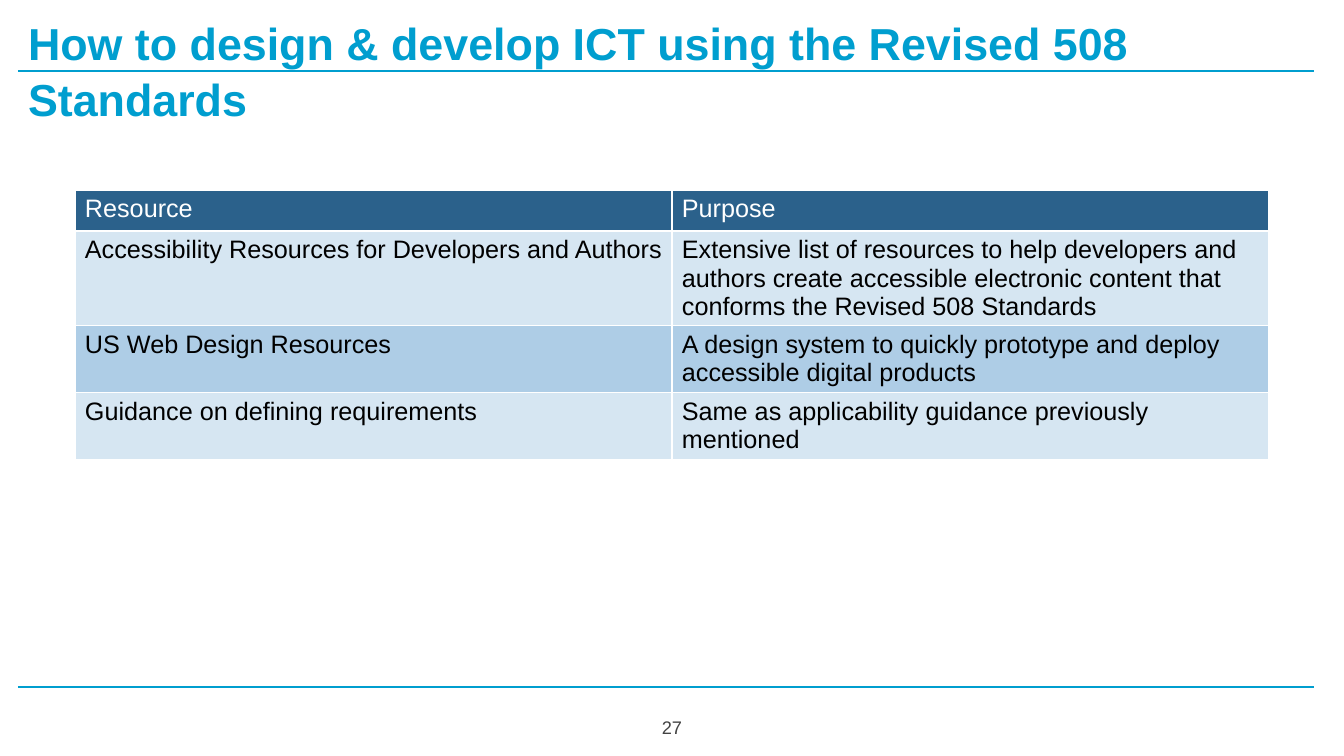
from lxml.etree import SubElement
from pptx import Presentation
from pptx.dml.color import RGBColor
from pptx.enum.shapes import MSO_CONNECTOR
from pptx.enum.text import MSO_ANCHOR, MSO_AUTO_SIZE, PP_ALIGN
from pptx.oxml.ns import qn
from pptx.util import Pt

COLORS = {
    "accent": "009ECF",
    "header": "2B618B",
    "light_band": "D6E6F2",
    "dark_band": "AECDE6",
    "white": "FFFFFF",
    "black": "000000",
    "page_number": "434343",
}
RESOURCES = [
    ("Resource", "Purpose"),
    (
        "Accessibility Resources for Developers and Authors",
        "Extensive list of resources to help developers and authors create "
        "accessible electronic content that conforms the Revised 508 Standards",
    ),
    (
        "US Web Design Resources",
        "A design system to quickly prototype and deploy accessible digital products",
    ),
    (
        "Guidance on defining requirements",
        "Same as applicability guidance previously mentioned",
    ),
]
ROW_HEIGHTS = (41, 94, 67, 67)
BORDER_SIDES = ("a:lnL", "a:lnR", "a:lnT", "a:lnB")


def px(length):
    return round(length * 914400 / 100.8)


def rgb(name):
    return RGBColor.from_string(COLORS[name])


def apply(target, values):
    for key, value in values.items():
        setattr(target, key, value)


def write(frame, text, size, color, bold=False, inset=10, **paragraph_format):
    margins = ("margin_left", "margin_right", "margin_top", "margin_bottom")
    apply(frame, {"word_wrap": True, **dict.fromkeys(margins, px(inset))})
    frame.text = text
    paragraph = frame.paragraphs[0]
    apply(paragraph, paragraph_format)
    apply(paragraph.font, {"name": "Arial", "size": Pt(size), "bold": bold})
    paragraph.font.color.rgb = rgb(color)


def add_rule(slide, left, top, width):
    rule = slide.shapes.add_connector(
        MSO_CONNECTOR.STRAIGHT, px(left), px(top), px(left + width), px(top)
    )
    rule.line.color.rgb = rgb("accent")
    rule.line.width = Pt(1.5)
    SubElement(rule._element.spPr, qn("a:effectLst"))


def add_title(slide, left, top, width, height):
    title = slide.shapes.title
    apply(title, {"left": px(left), "top": px(top), "width": px(width), "height": px(height)})
    apply(
        title.text_frame,
        {"vertical_anchor": MSO_ANCHOR.TOP, "auto_size": MSO_AUTO_SIZE.NONE},
    )
    write(
        title.text_frame,
        "How to design & develop ICT using the Revised 508 Standards",
        32, "accent", bold=True,
        alignment=PP_ALIGN.LEFT, line_spacing=1.05, space_before=Pt(0),
    )
    add_rule(slide, left, top + 68, 1296)


def add_borders(cell):
    properties = cell._tc.get_or_add_tcPr()
    for position, side in enumerate(BORDER_SIDES):
        border = properties.makeelement(qn(side), {"w": str(Pt(1))})
        fill = SubElement(border, qn("a:solidFill"))
        SubElement(fill, qn("a:srgbClr"), val=COLORS["white"])
        properties.insert(position, border)


def add_resources(slide, left, top, width):
    table = slide.shapes.add_table(
        len(RESOURCES), 2, px(left), px(top), px(width), px(sum(ROW_HEIGHTS))
    ).table
    for column in table.columns:
        column.width = px(width / 2)
    for row_index, (entry, height) in enumerate(zip(RESOURCES, ROW_HEIGHTS)):
        table.rows[row_index].height = px(height)
        band = "light_band" if row_index % 2 else "dark_band"
        fill, color = (band, "black") if row_index else ("header", "white")
        for column_index, text in enumerate(entry):
            cell = table.cell(row_index, column_index)
            write(cell.text_frame, text, 18, color)
            apply(cell, {"margin_left": px(10), "margin_right": px(10),
                         "margin_top": px(5), "margin_bottom": px(5)})
            cell.fill.solid()
            cell.fill.fore_color.rgb = rgb(fill)
            add_borders(cell)


def add_footer(slide, left, top, width):
    add_rule(slide, left, top, width)
    page_number = slide.shapes.add_textbox(px(left + 624), px(top + 12), px(60), px(57))
    page_number.text_frame.vertical_anchor = MSO_ANCHOR.MIDDLE
    write(page_number.text_frame, "27", 13, "page_number", alignment=PP_ALIGN.CENTER)


def main():
    presentation = Presentation()
    apply(presentation, {"slide_width": px(1344), "slide_height": px(756)})
    slide = presentation.slides.add_slide(presentation.slide_layouts[5])
    slide.background.fill.solid()
    slide.background.fill.fore_color.rgb = rgb("white")
    add_title(slide, 18, 3, 1282, 117)
    add_resources(slide, 75, 190, 1194)
    add_footer(slide, 18, 687, 1296)
    presentation.save("out.pptx")


if __name__ == "__main__":
    main()
